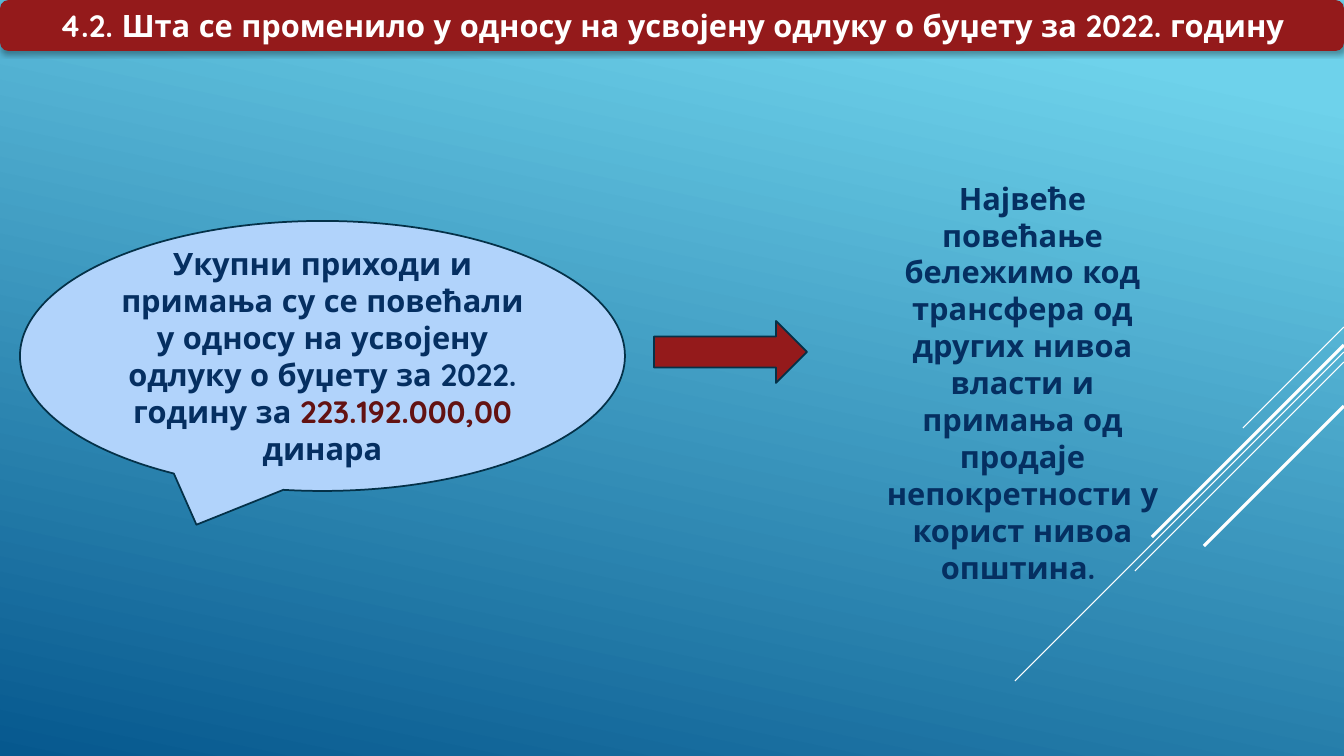
from lxml import etree
from pptx import Presentation
from pptx.dml.color import RGBColor
from pptx.enum.shapes import MSO_CONNECTOR, MSO_SHAPE
from pptx.enum.text import MSO_ANCHOR, PP_ALIGN
from pptx.oxml.ns import qn
from pptx.util import Pt

EMU_PER_PX = 914400 / 100.8
WIDTH, HEIGHT = 1344, 756
BANNER, CALLOUT = MSO_SHAPE.ROUNDED_RECTANGLE, MSO_SHAPE.OVAL_CALLOUT
ARROW, TEARDROP = MSO_SHAPE.RIGHT_ARROW, MSO_SHAPE.TEAR
STRAIGHT = MSO_CONNECTOR.STRAIGHT
MIDDLE, CENTER = MSO_ANCHOR.MIDDLE, PP_ALIGN.CENTER

WHITE, RED, DARK_RED = "FFFFFF", "941A1B", "631212"
NAVY, OUTLINE, PALE_BLUE = "052F61", "043148", "B1D3FB"
BACKGROUND_STOPS = [(0.1, "6ED2EB"), (1, "06588E")]
BACKGROUND_ANGLE = 258
TEXT_FORMAT = {"name": "Quicksand", "size": Pt(22), "bold": True}
SHADOW_FORMAT = {"blurRad": Pt(3.5), "dist": Pt(2.2), "dir": 90 * 60000, "rotWithShape": 0}

DIAGONALS = [
    (327, 101, 0.75),
    (352, 329, 0.75),
    (362, 209, 0.75),
    (345, 192, 2.25),
    (406, 140, 2.25),
]
TITLE = [("4.2. Шта се променило у односу на усвојену одлуку о буџету за 2022. годину", WHITE)]
INCREASE = [
    ("Укупни приходи и примања су се повећали у односу на усвојену одлуку о буџету за 2022. годину за ", NAVY),
    ("223.192.000,00 ", DARK_RED),
    ("динара", NAVY),
]
REASON = [
    ("Највеће повећање бележимо код трансфера од других нивоа власти и "
     "примања од продаје непокретности у корист нивоа општина. ", NAVY),
]


def px(length):
    return round(length * EMU_PER_PX)


def color(value):
    return RGBColor.from_string(value)


def set_background(page):
    fill = page.background.fill
    fill.gradient()
    fill.gradient_angle = BACKGROUND_ANGLE
    for stop, (position, value) in zip(fill.gradient_stops, BACKGROUND_STOPS):
        stop.position = position
        stop.color.rgb = color(value)


def add_diagonal(page, top, run, weight):
    line = page.shapes.add_connector(STRAIGHT, px(WIDTH), px(top), px(WIDTH - run), px(top + run))
    line.line.color.rgb = color(WHITE)
    line.line.width = Pt(weight)
    etree.SubElement(line._element.spPr, qn("a:effectLst"))


def add_box(page, kind, bounds, fill=None, outline=None, spans=()):
    box = page.shapes.add_shape(kind, *map(px, bounds))
    box.shadow.inherit = False
    if fill:
        box.fill.solid()
        box.fill.fore_color.rgb = color(fill)
    else:
        box.fill.background()
    if outline:
        box.line.color.rgb = color(outline)
        box.line.width = Pt(1.25)
    else:
        box.line.fill.background()
    add_text(box, spans)
    return box


def add_text(box, spans):
    frame = box.text_frame
    frame.word_wrap = True
    frame.vertical_anchor = MIDDLE
    para = frame.paragraphs[0]
    para.alignment = CENTER
    for text, value in spans:
        span = para.add_run()
        span.text = text
        for name, setting in TEXT_FORMAT.items():
            setattr(span.font, name, setting)
        span.font.color.rgb = color(value)


def add_shadow(box):
    effects = box._element.spPr.find(qn("a:effectLst"))
    shadow = etree.SubElement(effects, qn("a:outerShdw"))
    for name, setting in SHADOW_FORMAT.items():
        shadow.set(name, str(setting))
    shade = etree.SubElement(shadow, qn("a:srgbClr"), val="000000")
    etree.SubElement(shade, qn("a:alpha"), val="32000")


def main():
    deck = Presentation()
    deck.slide_width, deck.slide_height = px(WIDTH), px(HEIGHT)
    page = deck.slides.add_slide(deck.slide_layouts[6])
    set_background(page)
    for diagonal in DIAGONALS:
        add_diagonal(page, *diagonal)
    banner = add_box(page, BANNER, (0, 0, WIDTH, 51), fill=RED, spans=TITLE)
    add_shadow(banner)
    add_box(page, CALLOUT, (20, 221, 605, 270), PALE_BLUE, OUTLINE, INCREASE)
    add_box(page, ARROW, (654, 321, 153, 62), RED, OUTLINE)
    add_box(page, TEARDROP, (800, 166, 445, 433), spans=REASON)
    deck.save("out.pptx")


if __name__ == "__main__":
    main()
